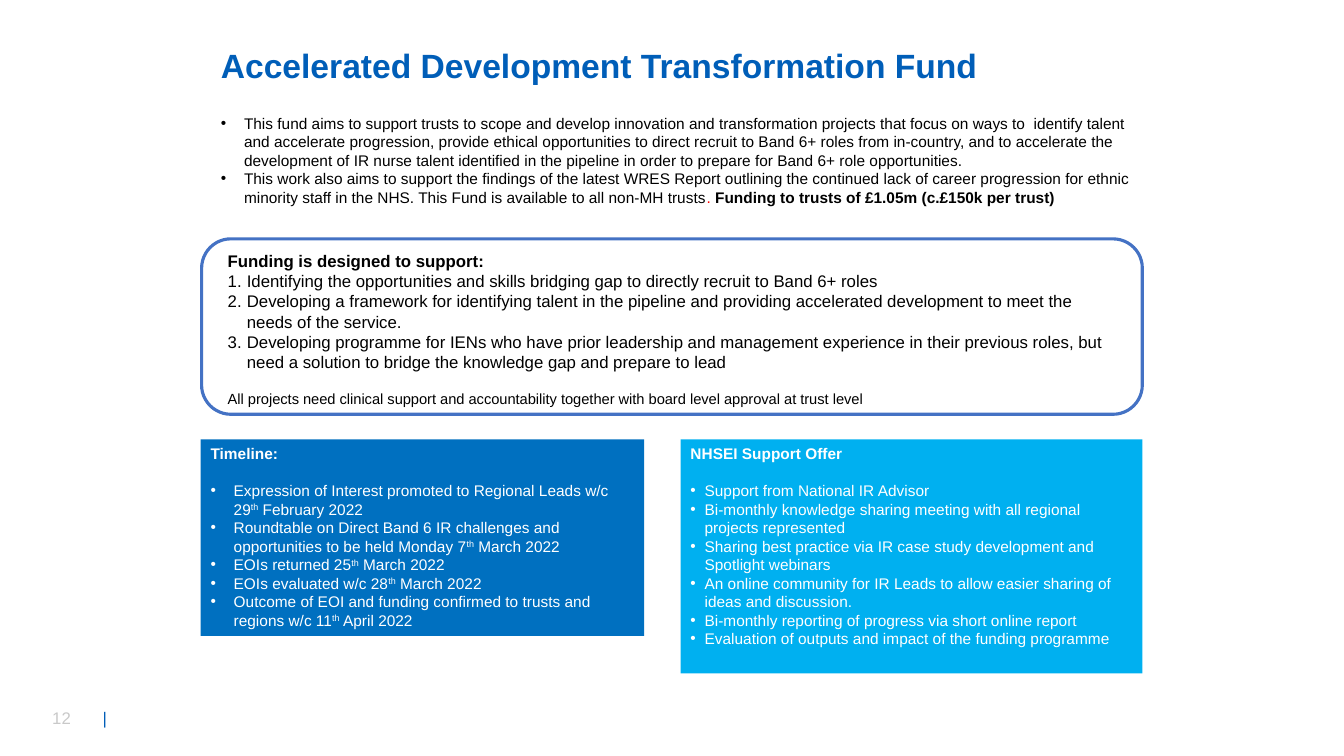
from lxml import etree
from pptx import Presentation
from pptx.dml.color import RGBColor
from pptx.enum.shapes import MSO_SHAPE as Shape
from pptx.enum.text import MSO_ANCHOR as Anchor, MSO_AUTO_SIZE as AutoSize, PP_ALIGN as Align
from pptx.oxml.ns import qn
from pptx.util import Inches, Pt

COLOURS = {
    "heading": "005EB8", "text": "000000", "stop": "FF0000", "white": "FFFFFF",
    "outline": "4472C4", "timeline": "0070C0", "support": "00B0F0", "number": "C9C9C9",
}


class FundSlide:
    font = "Arial"

    def __init__(self, deck):
        self.slide = deck.slides.add_slide(deck.slide_layouts[1])

    def colour(self, name):
        return RGBColor.from_string(COLOURS[name])

    def place(self, shape, box):
        shape.left, shape.top, shape.width, shape.height = map(Inches, box)

    def frame(self, shape, anchor=Anchor.TOP):
        frame = shape.text_frame
        frame.word_wrap = True
        frame.auto_size = AutoSize.NONE
        frame.vertical_anchor = anchor
        return frame

    def run(self, paragraph, text, size, colour="text", bold=False, raised=False):
        run = paragraph.add_run()
        run.text = text
        run.font.name = self.font
        run.font.size = Pt(size)
        run.font.bold = bold
        run.font.color.rgb = self.colour(colour)
        if raised:
            run._r.get_or_add_rPr().set("baseline", "30000")

    def paragraph(self, frame, before=0, indent=0, marker=None):
        first = frame.paragraphs[0]
        paragraph = frame.add_paragraph() if first.runs else first
        paragraph.alignment = Align.LEFT
        paragraph.space_before = Pt(before)
        properties = paragraph._p.get_or_add_pPr()
        properties.set("marL", str(Inches(indent)))
        properties.set("indent", str(-Inches(indent)))
        if marker == "number":
            etree.SubElement(properties, qn("a:buAutoNum"), type="arabicPeriod")
        elif marker == "bullet":
            etree.SubElement(properties, qn("a:buFont"), typeface=self.font)
            etree.SubElement(properties, qn("a:buChar"), char="•")
        else:
            etree.SubElement(properties, qn("a:buNone"))
        return paragraph

    def title(self, text, box):
        title = self.slide.shapes.title
        self.place(title, box)
        paragraph = self.paragraph(self.frame(title, Anchor.MIDDLE))
        paragraph.line_spacing = 0.9
        self.run(paragraph, text, 24, "heading", True)

    def summary(self, points, box):
        body = self.slide.placeholders[1]
        self.place(body, box)
        frame = self.frame(body)
        for point in points:
            paragraph = self.paragraph(frame, indent=0.23, marker="bullet")
            for text, colour, bold in point:
                self.run(paragraph, text, 11, colour, bold)

    def panel(self, kind, box, fill, outline=None):
        panel = self.slide.shapes.add_shape(kind, *map(Inches, box))
        panel.shadow.inherit = False
        panel.fill.solid()
        panel.fill.fore_color.rgb = self.colour(fill)
        if outline:
            panel.line.color.rgb = self.colour(outline)
            panel.line.width = Pt(2.25)
        else:
            panel.line.fill.background()
        return panel

    def text_box(self, box):
        return self.frame(self.slide.shapes.add_textbox(*map(Inches, box)))

    def funding(self, heading, aims, condition, box):
        frame = self.text_box(box)
        self.run(self.paragraph(frame), heading, 12, bold=True)
        for aim in aims:
            self.run(self.paragraph(frame, indent=0.19, marker="number"), aim, 12)
        self.run(self.paragraph(frame, before=12.6), condition, 10.5)

    def list_panel(self, heading, items, box, fill, indent):
        frame = self.frame(self.panel(Shape.RECTANGLE, box, fill))
        self.run(self.paragraph(frame), heading, 11, "white", True)
        for position, item in enumerate(items):
            before = 0 if position else 13.2
            paragraph = self.paragraph(frame, before, indent, "bullet")
            for part in item:
                self.run(paragraph, part, 11, "white", raised=part == "th")

    def page_number(self, number, box):
        paragraph = self.paragraph(self.text_box(box))
        tabs = etree.SubElement(paragraph._p.get_or_add_pPr(), qn("a:tabLst"))
        etree.SubElement(tabs, qn("a:tab"), pos=str(Inches(0.32)), algn="l")
        self.run(paragraph, f"{number}\t", 12, "number")
        self.run(paragraph, "|", 12, "heading")


SUMMARY = [
    [("This fund aims to support trusts to scope and develop innovation and transformation "
      "projects that focus on ways to  identify talent and accelerate progression, provide "
      "ethical opportunities to direct recruit to Band 6+ roles from in-country, and to "
      "accelerate the development of IR nurse talent identified in the pipeline in order to "
      "prepare for Band 6+ role opportunities.", "text", False)],
    [("This work also aims to support the findings of the latest WRES Report outlining the "
      "continued lack of career progression for ethnic minority staff in the NHS. This Fund "
      "is available to all non-MH trusts", "text", False),
     (".", "stop", False),
     (" Funding to trusts of £1.05m (c.£150k per trust)", "text", True)],
]
AIMS = [
    "Identifying the opportunities and skills bridging gap to directly recruit to Band 6+ roles",
    "Developing a framework for identifying talent in the pipeline and providing accelerated "
    "development to meet the needs of the service.",
    "Developing programme for IENs who have prior leadership and management experience in their "
    "previous roles, but need a solution to bridge the knowledge gap and prepare to lead",
]
SUPPORT = [
    ["Support from National IR Advisor"],
    ["Bi-monthly knowledge sharing meeting with all regional projects represented"],
    ["Sharing best practice via IR case study development and Spotlight webinars"],
    ["An online community for IR Leads to allow easier sharing of ideas and discussion."],
    ["Bi-monthly reporting of progress via short online report"],
    ["Evaluation of outputs and impact of the funding programme"],
]
TIMELINE = [
    ["Expression of Interest promoted to Regional Leads w/c 29", "th", " February 2022"],
    ["Roundtable on Direct Band 6 IR challenges and opportunities to be held Monday 7", "th",
     " March 2022"],
    ["EOIs returned 25", "th", " March 2022"],
    ["EOIs evaluated w/c 28", "th", " March 2022"],
    ["Outcome of EOI and funding confirmed to trusts and regions w/c 11", "th", " April 2022"],
]


def main():
    deck = Presentation()
    deck.slide_width, deck.slide_height = Inches(13.33), Inches(7.5)
    fund = FundSlide(deck)
    fund.title("Accelerated Development Transformation Fund", (2.09, 0.34, 8.12, 0.67))
    fund.summary(SUMMARY, (2.09, 1.08, 9.33, 1.21))
    fund.panel(Shape.ROUNDED_RECTANGLE, (2, 2.37, 9.33, 1.74), "white", "outline")
    fund.funding(
        "Funding is designed to support:", AIMS,
        "All projects need clinical support and accountability together with board level "
        "approval at trust level", (2.16, 2.44, 8.95, 1.67))
    fund.list_panel("NHSEI Support Offer", SUPPORT, (6.75, 4.36, 4.58, 2.32), "support", 0.14)
    fund.list_panel("Timeline:", TIMELINE, (1.99, 4.36, 4.4, 1.95), "timeline", 0.23)
    fund.page_number(12, (0.42, 6.97, 0.94, 0.3))
    deck.save("out.pptx")


if __name__ == "__main__":
    main()
